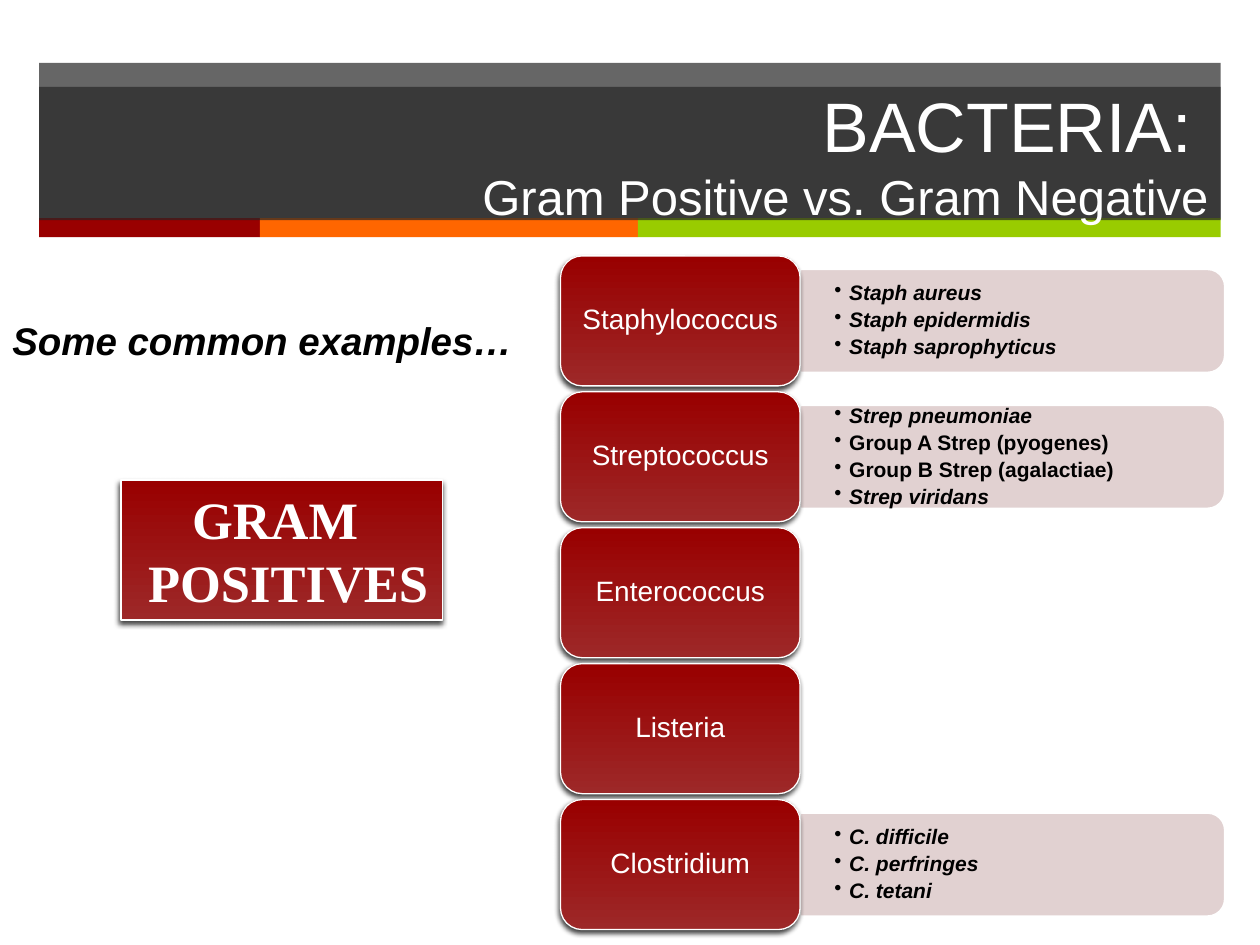
from lxml import etree
from pptx import Presentation
from pptx.dml.color import RGBColor
from pptx.enum.shapes import MSO_SHAPE
from pptx.enum.text import MSO_ANCHOR, PP_ALIGN
from pptx.oxml.ns import qn
from pptx.util import Cm, Pt

RECT = MSO_SHAPE.RECTANGLE
ROUND = MSO_SHAPE.ROUNDED_RECTANGLE
ROUND_TOP = MSO_SHAPE.ROUND_2_SAME_RECTANGLE
LEFT, CENTER, RIGHT = PP_ALIGN.LEFT, PP_ALIGN.CENTER, PP_ALIGN.RIGHT
TOP, MIDDLE = MSO_ANCHOR.TOP, MSO_ANCHOR.MIDDLE

BANDS = [(4.45, "990000"), (7.62, "FF6600"), (11.75, "99CC00")]
GENERA = [
    ("Staphylococcus", [("Staph aureus", True), ("Staph epidermidis", True),
                        ("Staph saprophyticus", True)]),
    ("Streptococcus", [("Strep pneumoniae", True), ("Group A Strep (pyogenes)", False),
                       ("Group B Strep (agalactiae)", False), ("Strep viridans", True)]),
    ("Enterococcus", []),
    ("Listeria", []),
    ("Clostridium", [("C. difficile", True), ("C. perfringes", True), ("C. tetani", True)]),
]


def rgb(value):
    return RGBColor.from_string(value)


class Deck:
    """Style of the bacteria slide and the slide being drawn."""

    WHITE, BLACK, DARK, PANEL = "FFFFFF", "000000", "262626", "DECCCC"
    GRADIENT = ("9D2828", "990000")

    def __init__(self, prs):
        self.s = prs.slides.add_slide(prs.slide_layouts[6])

    def shape(self, kind, x, y, w, h, fill, alpha=None, line=None):
        sp = self.s.shapes.add_shape(kind, Cm(x), Cm(y), Cm(w), Cm(h))
        sp.shadow.inherit = False
        sp.fill.solid()
        sp.fill.fore_color.rgb = rgb(fill)
        if alpha:
            color = sp.element.spPr.find(qn("a:solidFill"))[0]
            etree.SubElement(color, qn("a:alpha"), val=str(alpha * 1000))
        if line:
            sp.line.color.rgb = rgb(self.WHITE)
            sp.line.width = Pt(line)
        else:
            sp.line.fill.background()
        return sp

    def red_box(self, kind, x, y, w, h, line):
        sp = self.shape(kind, x, y, w, h, self.GRADIENT[0], line=line)
        sp.fill.gradient()
        sp.fill.gradient_angle = 90
        for stop, color in zip(sp.fill.gradient_stops, self.GRADIENT):
            stop.color.rgb = rgb(color)
        effects = sp.element.spPr.find(qn("a:effectLst"))
        shadow = etree.SubElement(effects, qn("a:outerShdw"), blurRad=str(Pt(3)),
                                  dist=str(Pt(2)), dir="6600000", rotWithShape="0")
        color = etree.SubElement(shadow, qn("a:srgbClr"), val=self.BLACK)
        etree.SubElement(color, qn("a:alpha"), val="75000")
        return sp

    def textbox(self, x, y, w, h):
        return self.s.shapes.add_textbox(Cm(x), Cm(y), Cm(w), Cm(h))

    def frame(self, sp, wrap=True, anchor=MIDDLE, inset=(0.25, 0.13)):
        tf = sp.text_frame
        dx, dy = map(Cm, inset)
        values = {"word_wrap": wrap, "vertical_anchor": anchor, "margin_left": dx,
                  "margin_right": dx, "margin_top": dy, "margin_bottom": dy}
        for name, value in values.items():
            setattr(tf, name, value)
        return tf

    def paragraph(self, tf, align, **spacing):
        p = tf.paragraphs[0] if not tf.paragraphs[0].runs else tf.add_paragraph()
        for name, value in {"alignment": align, **spacing}.items():
            setattr(p, name, value)
        return p

    def run(self, p, text, size, color=WHITE, **style):
        r = p.add_run()
        r.text = text
        for name, value in {"name": "Arial", "size": Pt(size), **style}.items():
            setattr(r.font, name, value)
        r.font.color.rgb = rgb(color)

    def bullet(self, tf, text, italic):
        p = self.paragraph(tf, LEFT, level=1, line_spacing=0.9, space_after=Pt(2.4))
        self.run(p, text, 12, self.BLACK, bold=True, italic=italic)
        pPr = p._p.get_or_add_pPr()
        pPr.set("marL", str(Cm(0.3)))
        pPr.set("indent", str(Cm(-0.3)))
        etree.SubElement(pPr, qn("a:buChar"), char="•")

    def header(self):
        x, w = 0.79, 23.82
        self.shape(RECT, x, 1.27, w, 3.14, self.DARK, 70)
        left = x
        for width, color in BANDS:
            self.shape(RECT, left, 4.4, width, 0.38, color)
            left += width
        title = self.shape(RECT, x, 1.75, w, 2.69, self.DARK, 70)
        p = self.paragraph(self.frame(title), RIGHT)
        self.run(p, "BACTERIA:", 40)
        self.run(p, " ", 34)
        p.add_line_break()
        self.run(p, "Gram Positive vs. Gram Negative", 28)

    def label(self):
        tf = self.frame(self.red_box(RECT, 2.44, 9.68, 6.48, 2.82, 1), False, TOP)
        for text in ("GRAM ", " POSITIVES"):
            self.run(self.paragraph(tf, CENTER), text, 30, name="Times New Roman", bold=True)

    def caption(self):
        tf = self.frame(self.textbox(0, 6.27, 10.9, 1.19), False, TOP)
        self.run(self.paragraph(tf, LEFT), "Some common examples…", 22, self.BLACK,
                 bold=True, italic=True)

    def genus(self, y, name, species):
        x, w, h = 11.3, 4.83, 2.62
        panel_w, panel_h = 8.56, 2.08
        middle = y + h / 2
        if species:
            panel = self.shape(ROUND_TOP, x + w + (panel_w - panel_h) / 2,
                               middle - panel_w / 2, panel_h, panel_w, self.PANEL, 90, 1)
            panel.rotation = 90
            box = self.textbox(x + w, middle - 0.94, 8.46, 1.88)
            tf = self.frame(box, inset=(0.69, 0.36))
            for text, italic in species:
                self.bullet(tf, text, italic)
        tf = self.frame(self.red_box(ROUND, x, y, w, h, 0.75), inset=(0.18, 0.08))
        self.run(self.paragraph(tf, CENTER, line_spacing=0.9), name, 16)


def main():
    prs = Presentation()
    prs.slide_width, prs.slide_height = Cm(25.4), Cm(19.05)
    deck = Deck(prs)
    deck.header()
    deck.label()
    for i, (name, species) in enumerate(GENERA):
        deck.genus(5.16 + 2.74 * i, name, species)
    deck.caption()
    prs.save("out.pptx")


if __name__ == "__main__":
    main()
